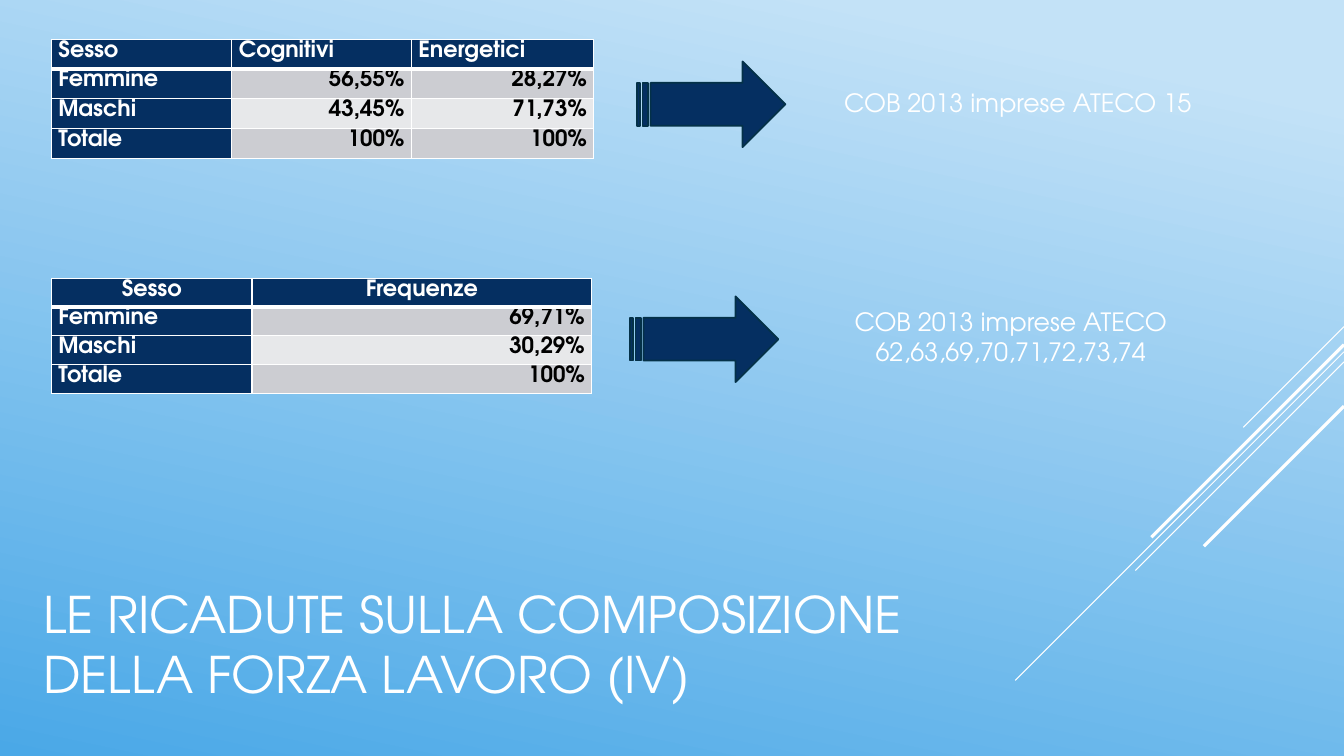
"""Build the slide on how the workforce composition changes by sex."""
from lxml.etree import SubElement
from pptx import Presentation
from pptx.dml.color import RGBColor
from pptx.enum.shapes import MSO_CONNECTOR, MSO_SHAPE
from pptx.enum.text import MSO_ANCHOR, MSO_AUTO_SIZE, PP_ALIGN
from pptx.oxml.ns import qn
from pptx.util import Inches, Pt

TITLE = "LE RICADUTE SULLA COMPOSIZIONE DELLA FORZA LAVORO (IV)"
FONT = "TeX Gyre Adventor"
COLORS = {"white": "FFFFFF", "black": "000000", "navy": "052F61", "edge": "043148",
          "odd": "CCCDD2", "even": "E7E8EA", "sky_light": "C3E2F7", "sky_dark": "4AA8E7"}
GROUPS = [
    {"rows": [("Sesso", "Cognitivi", "Energetici"),
              ("Femmine", "56,55%", "28,27%"),
              ("Maschi", "43,45%", "71,73%"),
              ("Totale", "100%", "100%")],
     "top": 0.39, "cols": (1.79, 1.78, 1.81), "row_h": 0.295, "head": PP_ALIGN.JUSTIFY,
     "arrow": (6.32, 0.61), "label": "COB 2013 imprese ATECO 15",
     "label_box": (8.08, 0.82, 4.03, 0.4)},
    {"rows": [("Sesso", "Frequenze"),
              ("Femmine", "69,71%"),
              ("Maschi", "30,29%"),
              ("Totale", "100%")],
     "top": 2.76, "cols": (1.99, 3.37), "row_h": 0.285, "head": PP_ALIGN.CENTER,
     "arrow": (6.25, 2.94), "label": "COB 2013 imprese ATECO 62,63,69,70,71,72,73,74",
     "label_box": (8.01, 2.99, 4.03, 0.71)},
]
TABLE_LEFT = 0.51
ARROW_SIZE = (1.47, 0.85)
SLIDE_W, SLIDE_H = 13.33, 7.5
DIAGONALS = [(3.24, 1.0, 0.75), (3.49, 3.26, 0.75), (3.59, 2.07, 0.75),
             (3.42, 1.91, 2.25), (4.03, 1.39, 2.25)]


def color(name):
    return RGBColor.from_string(COLORS[name])


def inches(values):
    return [Inches(v) for v in values]


def write(tf, text, size, ink="white", bold=False, align=PP_ALIGN.LEFT, spacing=None):
    p = tf.paragraphs[0]
    p.alignment = align
    p.line_spacing = spacing
    r = p.add_run()
    r.text = text
    for key, value in {"name": FONT, "size": Pt(size), "bold": bold}.items():
        setattr(r.font, key, value)
    r.font.color.rgb = color(ink)


def add_border(cell, side, width):
    ln = SubElement(cell._tc.get_or_add_tcPr(), qn(f"a:ln{side}"), w=str(Pt(width)))
    fill = SubElement(ln, qn("a:solidFill"))
    SubElement(fill, qn("a:srgbClr"), val=COLORS["white"])


def format_cell(cell, text, row, col, head_align):
    label = row == 0 or col == 0
    align = head_align if row == 0 else PP_ALIGN.JUSTIFY if col == 0 else PP_ALIGN.RIGHT
    margins = {"margin_left": 0.07, "margin_right": 0.07, "margin_top": 0, "margin_bottom": 0}
    for key, value in margins.items():
        setattr(cell, key, Inches(value))
    widths = {"L": 1, "R": 1, "T": 3 if row == 1 else 1, "B": 3 if row == 0 else 1}
    for side, width in widths.items():
        add_border(cell, side, width)
    cell.fill.solid()
    cell.fill.fore_color.rgb = color("navy" if label else "odd" if row % 2 else "even")
    write(cell.text_frame, text, 16, "white" if label else "black", True, align, 1.07)


def add_group(s, group):
    rows, cols, row_h = group["rows"], group["cols"], group["row_h"]
    box = inches((TABLE_LEFT, group["top"], sum(cols), row_h * len(rows)))
    table = s.shapes.add_table(len(rows), len(cols), *box).table
    for column, width in zip(table.columns, cols):
        column.width = Inches(width)
    for i, row in enumerate(rows):
        table.rows[i].height = Inches(row_h)
        for j, text in enumerate(row):
            format_cell(table.cell(i, j), text, i, j, group["head"])

    arrow = s.shapes.add_shape(MSO_SHAPE.STRIPED_RIGHT_ARROW,
                               *inches(group["arrow"] + ARROW_SIZE))
    arrow.shadow.inherit = False
    arrow.fill.solid()
    arrow.fill.fore_color.rgb = color("navy")
    arrow.line.color.rgb = color("edge")
    arrow.line.width = Pt(1.25)

    tf = s.shapes.add_textbox(*inches(group["label_box"])).text_frame
    tf.word_wrap = True
    write(tf, group["label"], 18, align=PP_ALIGN.CENTER)


def add_diagonal(s, top, run, width):
    ends = inches((SLIDE_W, top, SLIDE_W - run, top + run))
    line = s.shapes.add_connector(MSO_CONNECTOR.STRAIGHT, *ends)
    line.line.color.rgb = color("white")
    line.line.width = Pt(width)
    SubElement(line._element.spPr, qn("a:effectLst"))


def main():
    prs = Presentation()
    prs.slide_width, prs.slide_height = inches((SLIDE_W, SLIDE_H))
    s = prs.slides.add_slide(prs.slide_layouts[5])

    fill = s.background.fill
    fill.gradient()
    fill.gradient_angle = 258
    stops = [("sky_light", 0.1), ("sky_dark", 1.0)]
    for stop, (name, position) in zip(fill.gradient_stops, stops):
        stop.color.rgb = color(name)
        stop.position = position

    for diagonal in DIAGONALS:
        add_diagonal(s, *diagonal)

    title = s.shapes.title
    title.left, title.top, title.width, title.height = inches((0.33, 5.56, 9.33, 1.65))
    tf = title.text_frame
    frame = {"word_wrap": True, "auto_size": MSO_AUTO_SIZE.NONE,
             "vertical_anchor": MSO_ANCHOR.MIDDLE}
    for key, value in frame.items():
        setattr(tf, key, value)
    write(tf, TITLE, 36)

    for group in GROUPS:
        add_group(s, group)
    prs.save("out.pptx")


if __name__ == "__main__":
    main()
